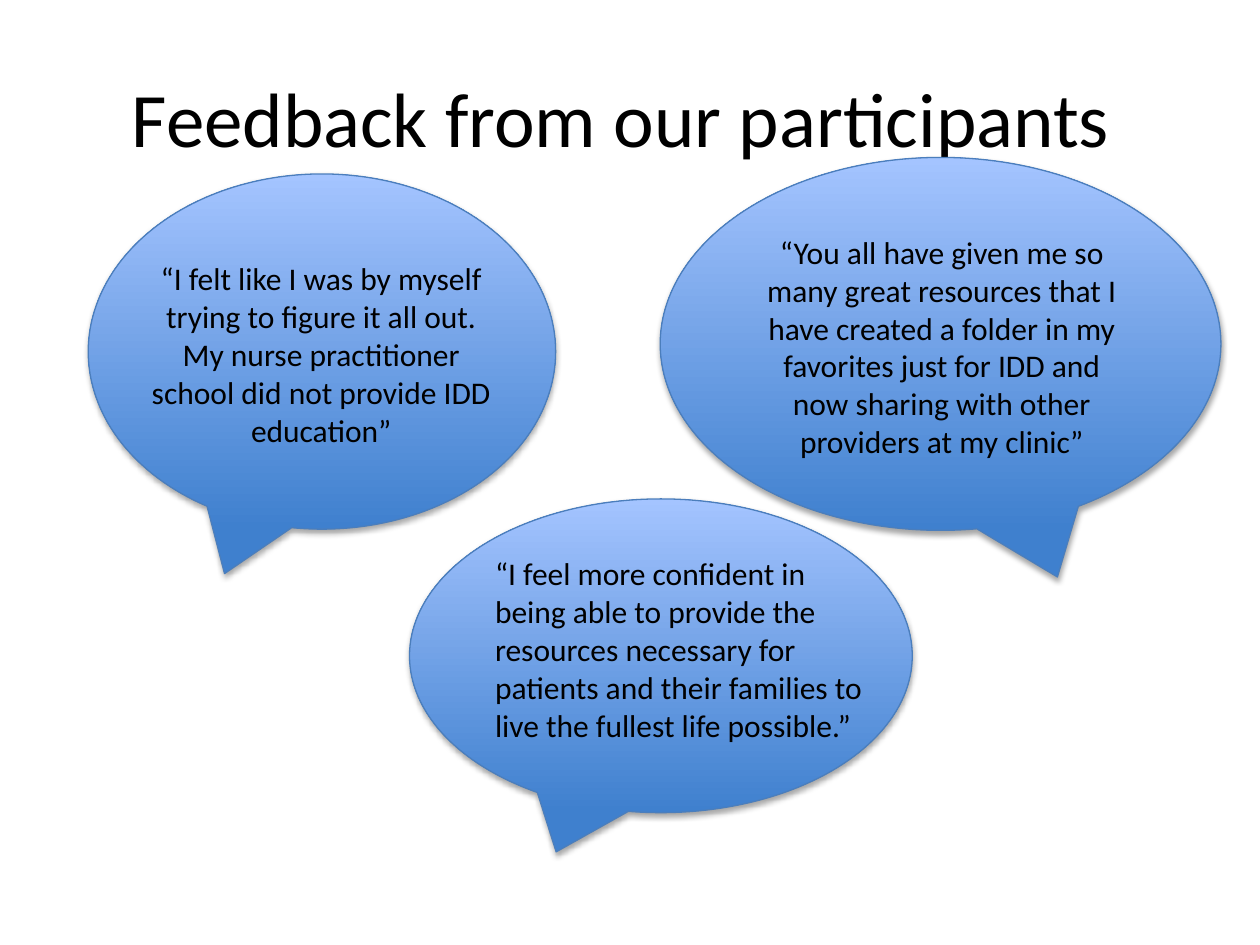
from lxml import etree
from pptx import Presentation
from pptx.dml.color import RGBColor
from pptx.enum.shapes import MSO_SHAPE
from pptx.enum.text import MSO_ANCHOR, MSO_AUTO_SIZE, PP_ALIGN
from pptx.oxml.ns import qn
from pptx.util import Pt

CALLOUT = MSO_SHAPE.OVAL_CALLOUT
MIDDLE = MSO_ANCHOR.MIDDLE
GROW = MSO_AUTO_SIZE.SHAPE_TO_FIT_TEXT
LEFT, CENTER = PP_ALIGN.LEFT, PP_ALIGN.CENTER

# Content: boxes are left, top, width, height in points
TITLE = "Feedback from our participants "
TITLE_BOX = (36, 21.6, 648, 90)
QUOTES = [
    {"text": "“I felt like I was by myself trying to figure it all out. My nurse "
             "practitioner school did not provide IDD education”",
     "bubble": (50.4, 99.4, 267.1, 203), "text_box": (79.2, 144.7, 208.8, 116.6),
     "align": CENTER, "flipped": False},
    {"text": "“You all have given me so many great resources that I have created a "
             "folder in my favorites just for IDD and now sharing with other "
             "providers at my clinic”",
     "bubble": (377.3, 90, 320.4, 213.1), "text_box": (427.7, 129.6, 221, 138.2),
     "align": CENTER, "flipped": True},
    {"text": "“I feel more confident in being able to provide the resources necessary "
             "for patients and their families to live the fullest life possible.”",
     "bubble": (234, 285.1, 287.3, 179.3), "text_box": (275.8, 313.2, 228.2, 116.6),
     "align": LEFT, "flipped": False},
]

THEME = {
    "font": "Calibri", "title_size": 44, "quote_size": 18,
    "text": RGBColor.from_string("000000"),
    "line": RGBColor.from_string("4B7EBC"),
    "gradient": [RGBColor.from_string(c) for c in ("3F80CE", "A4C4FF")],
    "shadow": {"blurRad": Pt(3.15), "dist": Pt(1.81), "dir": 90 * 60000, "rotWithShape": 0},
    "shadow_color": "000000", "shadow_opacity": 35,
}


def points(box):
    return [Pt(value) for value in box]


def write(shape, text, size, align):
    frame = shape.text_frame
    frame.word_wrap = True
    paragraph = frame.paragraphs[0]
    paragraph.text = text
    paragraph.alignment = align
    font = paragraph.runs[0].font
    for name, value in {"name": THEME["font"], "size": Pt(size)}.items():
        setattr(font, name, value)
    font.color.rgb = THEME["text"]
    return frame


def add_shadow(shape):
    shape.shadow.inherit = False
    effects = shape._element.spPr.find(qn("a:effectLst"))
    shadow = etree.SubElement(effects, qn("a:outerShdw"))
    for name, value in THEME["shadow"].items():
        shadow.set(name, str(int(value)))
    color = etree.SubElement(shadow, qn("a:srgbClr"), val=THEME["shadow_color"])
    etree.SubElement(color, qn("a:alpha"), val=str(THEME["shadow_opacity"] * 1000))


def add_bubble(slide, box, flipped):
    bubble = slide.shapes.add_shape(CALLOUT, *points(box))
    bubble.fill.gradient()
    bubble.fill.gradient_angle = 90
    for stop, color in zip(bubble.fill.gradient_stops, THEME["gradient"]):
        stop.color.rgb = color
    bubble.line.color.rgb = THEME["line"]
    bubble.line.width = Pt(0.75)
    add_shadow(bubble)
    if flipped:
        bubble._element.spPr.find(qn("a:xfrm")).set("flipH", "1")


def main():
    presentation = Presentation()
    presentation.slide_width, presentation.slide_height = Pt(720), Pt(540)
    slide = presentation.slides.add_slide(presentation.slide_layouts[5])

    # Title
    title = slide.shapes.title
    title.left, title.top, title.width, title.height = points(TITLE_BOX)
    write(title, TITLE, THEME["title_size"], CENTER).vertical_anchor = MIDDLE

    # Speech bubbles with their quotes
    for quote in QUOTES:
        add_bubble(slide, quote["bubble"], quote["flipped"])
        text_box = slide.shapes.add_textbox(*points(quote["text_box"]))
        frame = write(text_box, quote["text"], THEME["quote_size"], quote["align"])
        frame.auto_size = GROW

    presentation.save("out.pptx")


if __name__ == "__main__":
    main()
